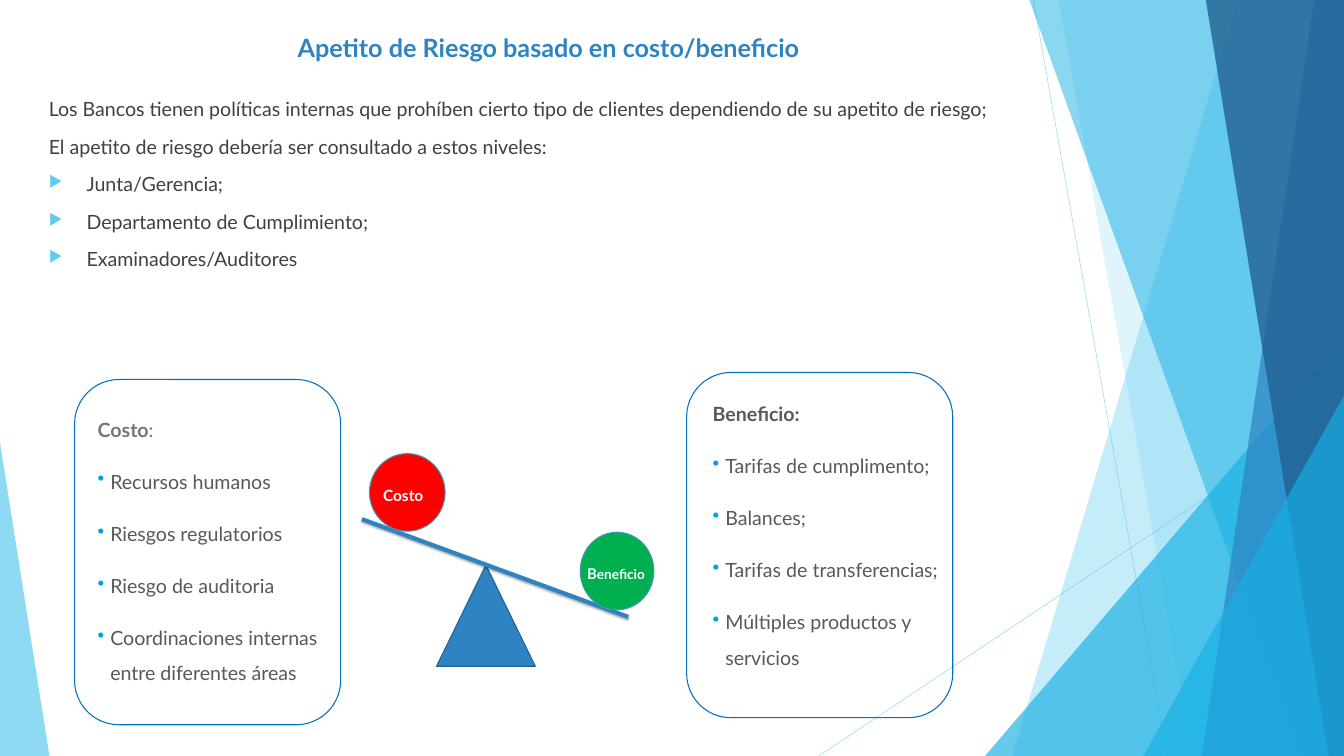
from pptx import Presentation
from pptx.dml.color import RGBColor
from pptx.enum.shapes import MSO_CONNECTOR, MSO_SHAPE
from pptx.enum.text import MSO_ANCHOR, PP_ALIGN
from pptx.oxml import parse_xml
from pptx.oxml.ns import nsdecls, qn
from pptx.util import Inches, Pt

BLUE, SKY, CYAN = "2E83C3", "5FCBEF", "17B0E4"
GRAY, WHITE = "595959", "FFFFFF"


def color(text):
    return RGBColor.from_string(text)


def fade(shape, alpha):
    for node in shape.element.spPr.iter(qn("a:srgbClr")):
        node.append(parse_xml(f'<a:alpha {nsdecls("a")} val="{alpha * 1000}"/>'))


def write(para, text, size=28, tint=GRAY, bold=False):
    run = para.add_run()
    run.text = text
    font = run.font
    font.name, font.size, font.bold = "Lato", Pt(size), bold
    font.color.rgb = color(tint)


def mark(para, sign, tint, share, indent):
    props = para._p.get_or_add_pPr()
    props.set("marL", str(Inches(indent)))
    props.set("indent", str(-Inches(indent)))
    for xml in (
        f'<a:buClr {nsdecls("a")}><a:srgbClr val="{tint}"/></a:buClr>',
        f'<a:buSzPct {nsdecls("a")} val="{share * 1000}"/>',
        f'<a:buChar {nsdecls("a")} char="{sign}"/>',
    ):
        props.append(parse_xml(xml))


class Deck:
    def __init__(self, wide, high):
        self.file = Presentation()
        self.file.slide_width, self.file.slide_height = Inches(wide), Inches(high)
        self.slide = self.file.slides.add_slide(self.file.slide_layouts[6])
        self.shapes = self.slide.shapes

    def spot(self, *shares):
        sides = self.file.slide_width, self.file.slide_height
        return [round(share * sides[i % 2] / 100) for i, share in enumerate(shares)]

    def paint(self, shape, fill, line, alpha):
        shape.shadow.inherit = False
        if fill:
            shape.fill.solid()
            shape.fill.fore_color.rgb = color(fill)
        else:
            shape.fill.background()
        if line:
            shape.line.color.rgb = color(line)
            shape.line.width = Pt(1.5)
        else:
            shape.line.fill.background()
        if alpha:
            fade(shape, alpha)

    def shape(self, kind, box, fill=None, line=None, alpha=None, adjust=None):
        shape = self.shapes.add_shape(kind, *self.spot(*box))
        if adjust is not None:
            shape.adjustments[0] = adjust
        self.paint(shape, fill, line, alpha)

    def band(self, top, base, fill, alpha):
        first, *rest = [self.spot(*p) for p in ((top, 0), (100, 0), (100, 100), (base, 100))]
        form = self.shapes.build_freeform(*first, scale=1.0)
        form.add_line_segments(rest, close=True)
        self.paint(form.convert_to_shape(), fill, None, alpha)

    def line(self, ends, tint, width, alpha=None, shadow=""):
        line = self.shapes.add_connector(MSO_CONNECTOR.STRAIGHT, *self.spot(*ends))
        line.line.color.rgb = color(tint)
        line.line.width = Pt(width)
        if alpha:
            fade(line, alpha)
        line.element.spPr.append(
            parse_xml(f'<a:effectLst {nsdecls("a")}>{shadow}</a:effectLst>'))

    def text(self, box, rows, before=12, after=12, space=1.5, align=PP_ALIGN.LEFT):
        frame = self.shapes.add_textbox(*self.spot(*box)).text_frame
        frame.word_wrap = True
        frame.vertical_anchor = MSO_ANCHOR.TOP
        for i, (runs, bullet) in enumerate(rows):
            para = frame.add_paragraph() if i else frame.paragraphs[0]
            para.alignment, para.line_spacing = align, space
            para.space_before, para.space_after = Pt(before), Pt(after)
            for words, style in runs:
                write(para, words, **style)
            if bullet:
                mark(para, *bullet)

    def panel(self, left, top, spot, head, items):
        dot = ("•", "00A1DF", 100, 0.25)
        rows = [(head, None)] + [([(item, {})], dot) for item in items]
        self.text((*spot, 20.78, 49.53), rows)
        self.shape(MSO_SHAPE.ROUNDED_RECTANGLE, (left, top, 19.8, 45.67), line="0070C0")

    def ball(self, box, fill):
        self.shape(MSO_SHAPE.OVAL, box, fill, "4696B1")


def main():
    deck = Deck(26.66, 15)
    wedge = MSO_SHAPE.ISOSCELES_TRIANGLE

    for ends in ((76.89, 0, 86.87, 100), (100, 53.67, 60.92, 100)):
        deck.line(ends, SKY, 0.75, alpha=70)
    deck.band(92.09, 75.32, SKY, 36)
    deck.band(78.77, 88.71, SKY, 20)
    deck.shape(wedge, (73.29, 44.47, 26.71, 55.53), CYAN, alpha=66, adjust=1)
    deck.band(76.59, 96.85, CYAN, 50)
    deck.band(97.79, 89.42, BLUE, 70)
    deck.band(89.72, 98.84, "226292", 80)
    deck.shape(wedge, (85.07, 52.33, 14.93, 47.67), CYAN, alpha=66, adjust=1)
    deck.shape(wedge, (0, 58.53, 3.68, 41.47), SKY, alpha=70, adjust=0)

    title = "Apetito de Riesgo basado en costo/beneficio"
    deck.text((5.55, 4, 70.52, 19.27),
              [([(title, dict(size=36, tint=BLUE, bold=True))], None)],
              before=0, after=0, space=1, align=PP_ALIGN.CENTER)

    arrow = ("▶", SKY, 80, 0.75)
    body = (
        ("Los Bancos tienen políticas internas que prohíben cierto tipo de clientes "
         "dependiendo de su apetito de riesgo;", None),
        ("El apetito de riesgo debería ser consultado a estos niveles:", None),
        ("Junta/Gerencia;", arrow),
        ("Departamento de Cumplimiento;", arrow),
        ("Examinadores/Auditores", arrow),
    )
    deck.text((3.26, 12.53, 70.52, 56.6),
              [([(words, dict(tint="404040"))], sign) for words, sign in body],
              before=20, after=0, space=1)

    deck.panel(5.55, 50.2, (6.9, 53.33),
               [("Costo", dict(tint="767676", bold=True)), (":", dict(tint="767676"))],
               ("Recursos humanos", "Riesgos regulatorios", "Riesgo de auditoria",
                "Coordinaciones internas entre diferentes áreas"))
    deck.panel(51.09, 49.27, (52.66, 51.27),
               [("Beneficio:", dict(bold=True))],
               ("Tarifas de cumplimento;", "Balances;", "Tarifas de transferencias;",
                "Múltiples productos y servicios"))

    deck.shape(wedge, (32.48, 74.73, 7.35, 13.4), BLUE, "226190")
    shadow = ('<a:outerShdw blurRad="38100" dist="25400" dir="5400000" rotWithShape="0">'
              '<a:srgbClr val="000000"><a:alpha val="35000"/></a:srgbClr></a:outerShdw>')
    deck.line((26.93, 68.67, 46.74, 81.6), BLUE, 6, shadow=shadow)
    deck.ball((27.49, 60, 5.63, 10.27), "FF0000")
    deck.ball((43.17, 70.4, 5.48, 10.27), "00B050")
    label = dict(tint=WHITE, bold=True)
    deck.text((28.13, 63, 3.98, 5.33), [([("Costo", dict(size=22.1, **label))], None)],
              space=1.4)
    deck.text((43.32, 73.13, 6.34, 5.33),
              [([("B", dict(size=21.3, **label)), ("eneficio", dict(size=19.4, **label))], None)])

    deck.file.save("out.pptx")


if __name__ == "__main__":
    main()
